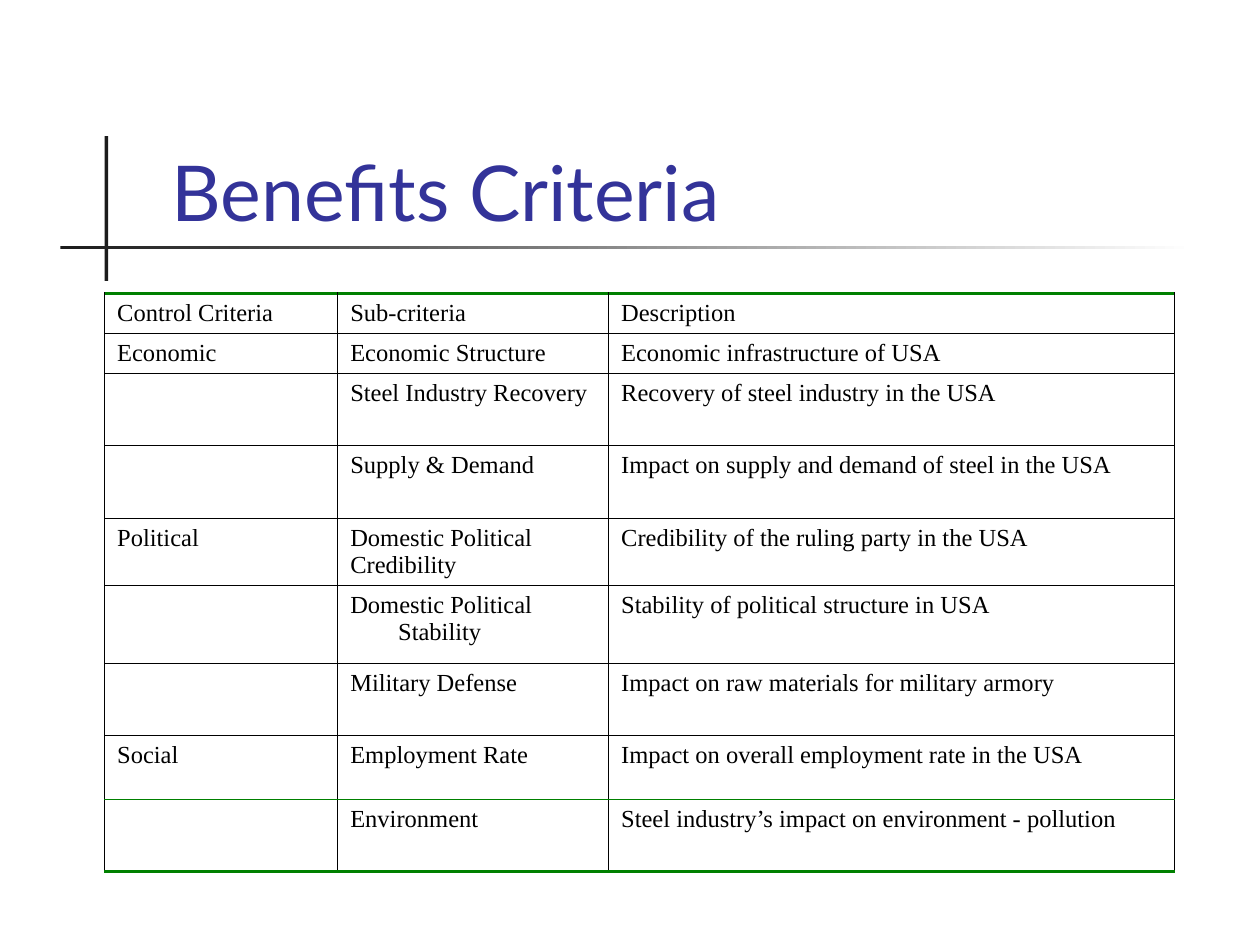
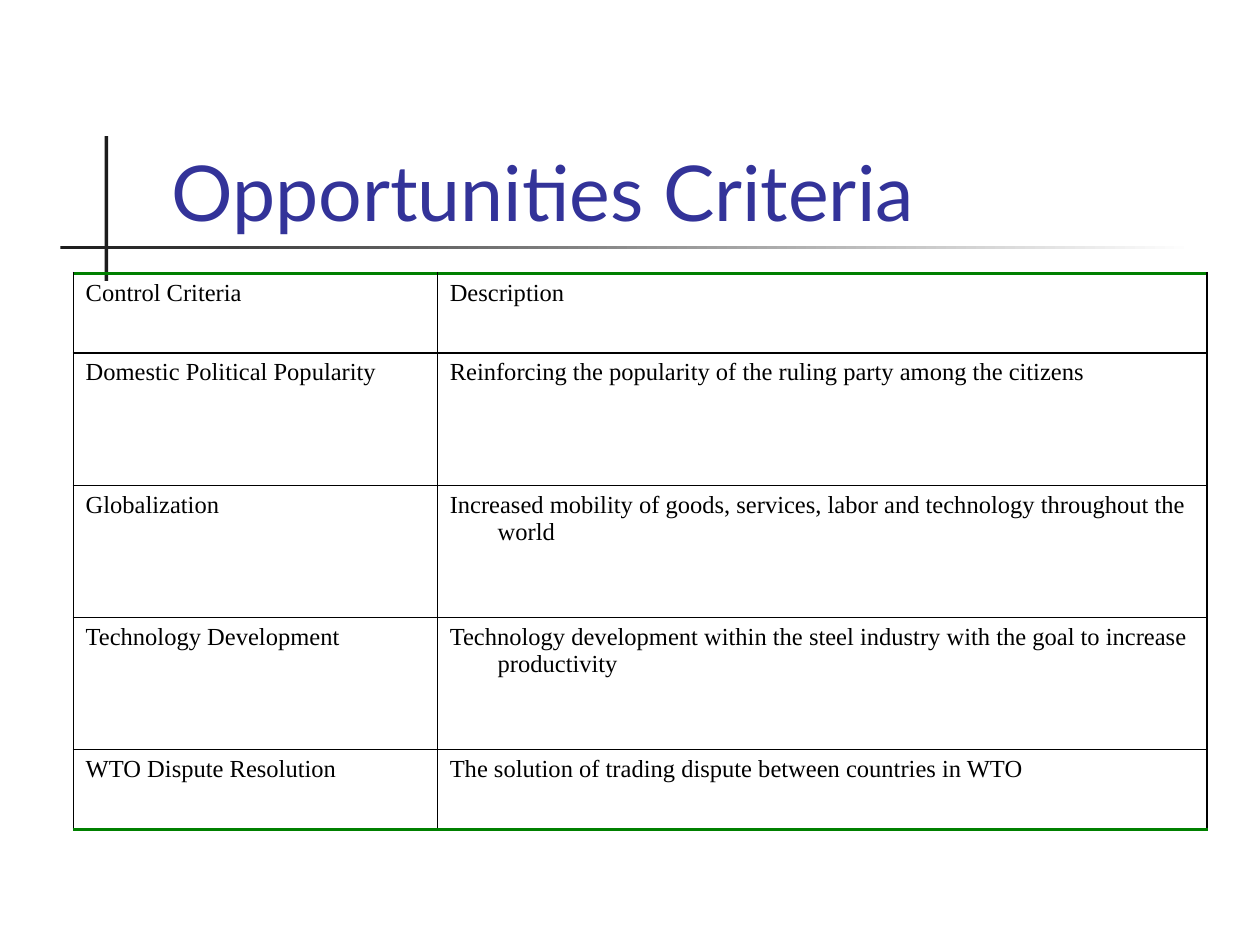
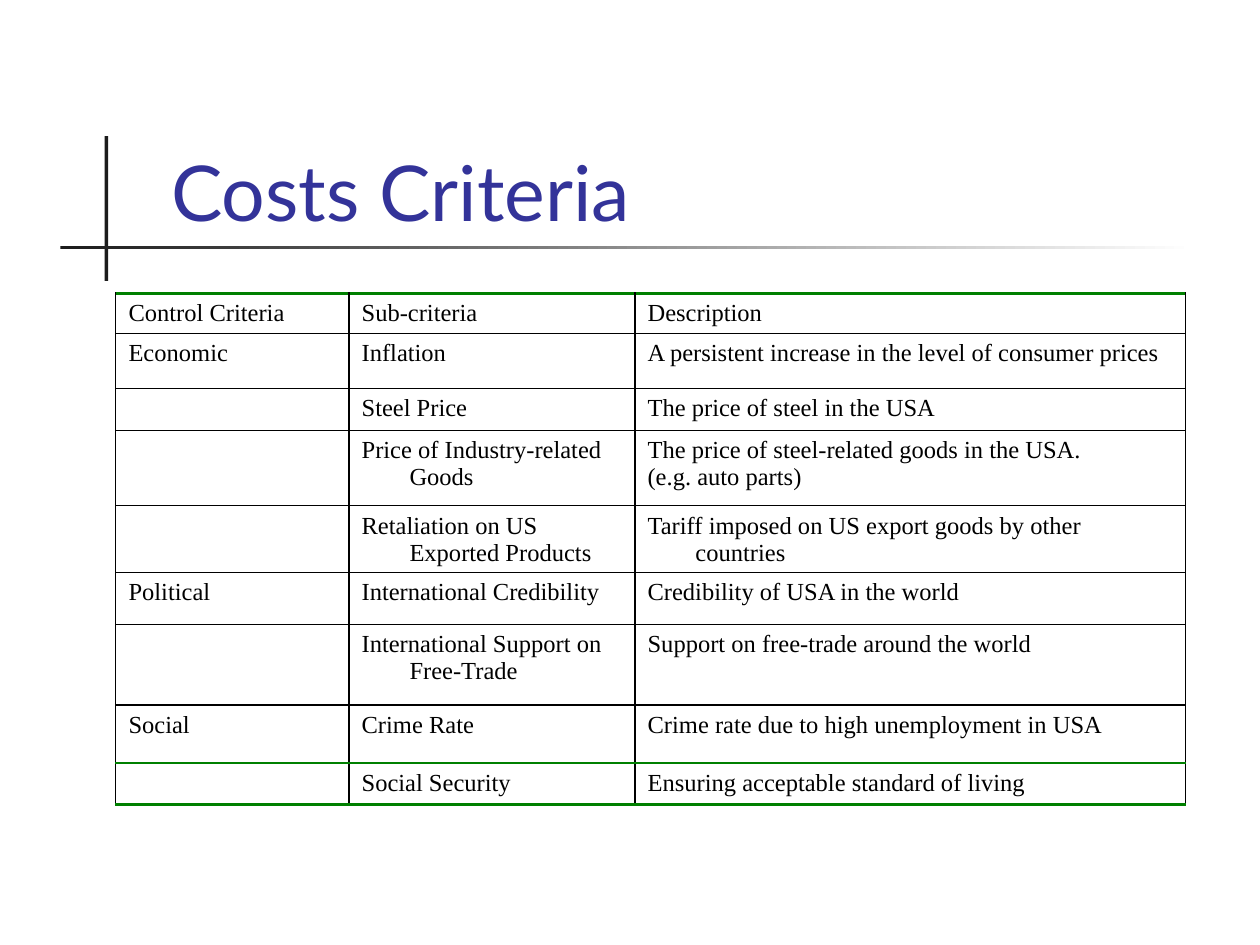
import lxml.etree
import pptx
import pptx.dml.color
import pptx.enum.shapes
import pptx.enum.text
import pptx.oxml.ns
import pptx.util

SLIDE_WIDTH = pptx.util.Inches(10)
SLIDE_HEIGHT = pptx.util.Inches(7.5)
COLUMN = SLIDE_WIDTH / 10
ROW = SLIDE_HEIGHT / 7.5
COLORS = {
    "title": "333399",
    "bar": "1C1C1C",
    "fade": "FFFFFF",
    "text": "000000",
    "grid": "000000",
    "accent": "008000",
}
TITLE_FONT = "Lato"
TABLE_FONT = "Times New Roman"
HANGING_INDENT = 0.38
THIN, MEDIUM, THICK = 0.75, 1, 2

BENEFITS = [
    ["Control Criteria", "Sub-criteria", "Description"],
    ["Economic", "Economic Structure", "Economic infrastructure of USA"],
    ["", "Steel Industry Recovery", "Recovery of steel industry in the USA"],
    ["", "Supply & Demand", "Impact on supply and demand of steel in the USA"],
    ["Political", "Domestic Political\nCredibility", "Credibility of the ruling party in the USA"],
    ["", "Domestic Political Stability", "Stability of political structure in USA"],
    ["", "Military Defense", "Impact on raw materials for military armory"],
    ["Social", "Employment Rate", "Impact on overall employment rate in the USA"],
    ["", "Environment", "Steel industry’s impact on environment - pollution"],
]
OPPORTUNITIES = [
    ["Control Criteria", "Description"],
    ["Domestic Political Popularity",
     "Reinforcing the popularity of the ruling party among the citizens"],
    ["Globalization",
     "Increased mobility of goods, services, labor and technology throughout the world"],
    ["Technology Development",
     "Technology development within the steel industry with the goal to increase productivity"],
    ["WTO Dispute Resolution", "The solution of trading dispute between countries in WTO"],
]
COSTS = [
    ["Control Criteria", "Sub-criteria", "Description"],
    ["Economic", "Inflation", "A persistent increase in the level of consumer prices"],
    ["", "Steel Price", "The price of steel in the USA"],
    ["", "Price of Industry-related Goods",
     "The price of steel-related goods in the USA.\n(e.g. auto parts)"],
    ["", "Retaliation on US Exported Products",
     "Tariff imposed on US export goods by other countries"],
    ["Political", "International Credibility", "Credibility of USA in the world"],
    ["", "International Support on Free-Trade", "Support on free-trade around the world"],
    ["Social", "Crime Rate", "Crime rate due to high unemployment in USA"],
    ["", "Social Security", "Ensuring acceptable standard of living"],
]


def across(columns):
    return round(columns * COLUMN)


def down(rows):
    return round(rows * ROW)


def color(name):
    return pptx.dml.color.RGBColor.from_string(COLORS[name])


def style_font(font, name, size, color_name):
    font.name = name
    font.size = pptx.util.Pt(size)
    font.color.rgb = color(color_name)


def add_bar(slide, left, top, width, height, fades=False):
    bar = slide.shapes.add_shape(
        pptx.enum.shapes.MSO_SHAPE.RECTANGLE,
        across(left), down(top), across(width), down(height))
    bar.shadow.inherit = False
    bar.line.fill.background()
    if fades:
        bar.fill.gradient()
        bar.fill.gradient_angle = 0
        for stop, name in zip(bar.fill.gradient_stops, ("bar", "fade")):
            stop.color.rgb = color(name)
    else:
        bar.fill.solid()
        bar.fill.fore_color.rgb = color("bar")
    return bar


def design_layout(layout, slide):
    title = layout.placeholders[0]
    title.left, title.top = across(1.26), down(0.68)
    title.width, title.height = across(8.52), down(1.25)
    title.text_frame.vertical_anchor = pptx.enum.text.MSO_ANCHOR.BOTTOM
    bars = [add_bar(slide, 0.83, 1.08, 0.03, 1.15),
            add_bar(slide, 0.48, 1.95, 9, 0.03, fades=True)]
    for number, bar in enumerate(bars):
        bar.element.nvSpPr.cNvPr.set("id", str(20 + number))
        layout.shapes.element.insert(2 + number, bar.element)


def add_title(slide, text):
    frame = slide.shapes.title.text_frame
    frame.text = text
    frame.auto_size = pptx.enum.text.MSO_AUTO_SIZE.NONE
    paragraph = frame.paragraphs[0]
    paragraph.alignment = pptx.enum.text.PP_ALIGN.LEFT
    style_font(paragraph.font, TITLE_FONT, 44, "title")


def add_border(cell, side, color_name, width):
    properties = cell._tc.get_or_add_tcPr()
    line = lxml.etree.SubElement(
        properties, pptx.oxml.ns.qn("a:ln" + side), w=str(pptx.util.Pt(width)))
    fill = lxml.etree.SubElement(line, pptx.oxml.ns.qn("a:solidFill"))
    lxml.etree.SubElement(fill, pptx.oxml.ns.qn("a:srgbClr"), val=COLORS[color_name])


def fill_cell(cell, text, top, bottom):
    cell.text = text
    for paragraph in cell.text_frame.paragraphs:
        style_font(paragraph.font, TABLE_FONT, 14, "text")
        properties = paragraph._p.get_or_add_pPr()
        properties.set("marL", str(across(HANGING_INDENT)))
        properties.set("indent", str(-across(HANGING_INDENT)))
    for side, border in zip("LRTB", (("grid", THIN), ("grid", THIN), top, bottom)):
        add_border(cell, side, *border)
    cell.fill.background()


def row_borders(count, accent_last_row):
    borders = [("grid", THIN)] * (count + 1)
    borders[0] = borders[-1] = ("accent", THICK)
    borders[1] = ("grid", MEDIUM)
    if accent_last_row:
        borders[-2] = ("accent", MEDIUM)
    return borders


def add_criteria_table(slide, rows, left, top, widths, heights, accent_last_row):
    table = slide.shapes.add_table(
        len(rows), len(widths), across(left), down(top),
        across(sum(widths)), down(sum(heights))).table
    table.first_row = table.horz_banding = False
    for column, width in zip(table.columns, widths):
        column.width = across(width)
    borders = row_borders(len(rows), accent_last_row)
    for index, (texts, height) in enumerate(zip(rows, heights)):
        table.rows[index].height = down(height)
        for cell, text in zip(table.rows[index].cells, texts):
            fill_cell(cell, text, borders[index], borders[index + 1])


def add_criteria_slide(presentation, layout, title, *table):
    slide = presentation.slides.add_slide(layout)
    add_title(slide, title)
    add_criteria_table(slide, *table)
    return slide


def main():
    presentation = pptx.Presentation()
    presentation.slide_width = SLIDE_WIDTH
    presentation.slide_height = SLIDE_HEIGHT
    layout = presentation.slide_layouts[5]
    benefits = add_criteria_slide(
        presentation, layout, "Benefits Criteria", BENEFITS, 0.83, 2.33,
        [1.85, 2.15, 4.49], [0.31, 0.32, 0.57, 0.58, 0.53, 0.62, 0.57, 0.51, 0.57], True)
    design_layout(layout, benefits)
    add_criteria_slide(
        presentation, layout, "Opportunities Criteria", OPPORTUNITIES, 0.58, 2.17,
        [2.89, 6.11], [0.63, 1.05, 1.05, 1.05, 0.63], False)
    add_criteria_slide(
        presentation, layout, "Costs Criteria", COSTS, 0.92, 2.33,
        [1.85, 2.27, 4.37], [0.31, 0.44, 0.33, 0.6, 0.53, 0.41, 0.64, 0.46, 0.33], True)
    presentation.save("out.pptx")


if __name__ == "__main__":
    main()
